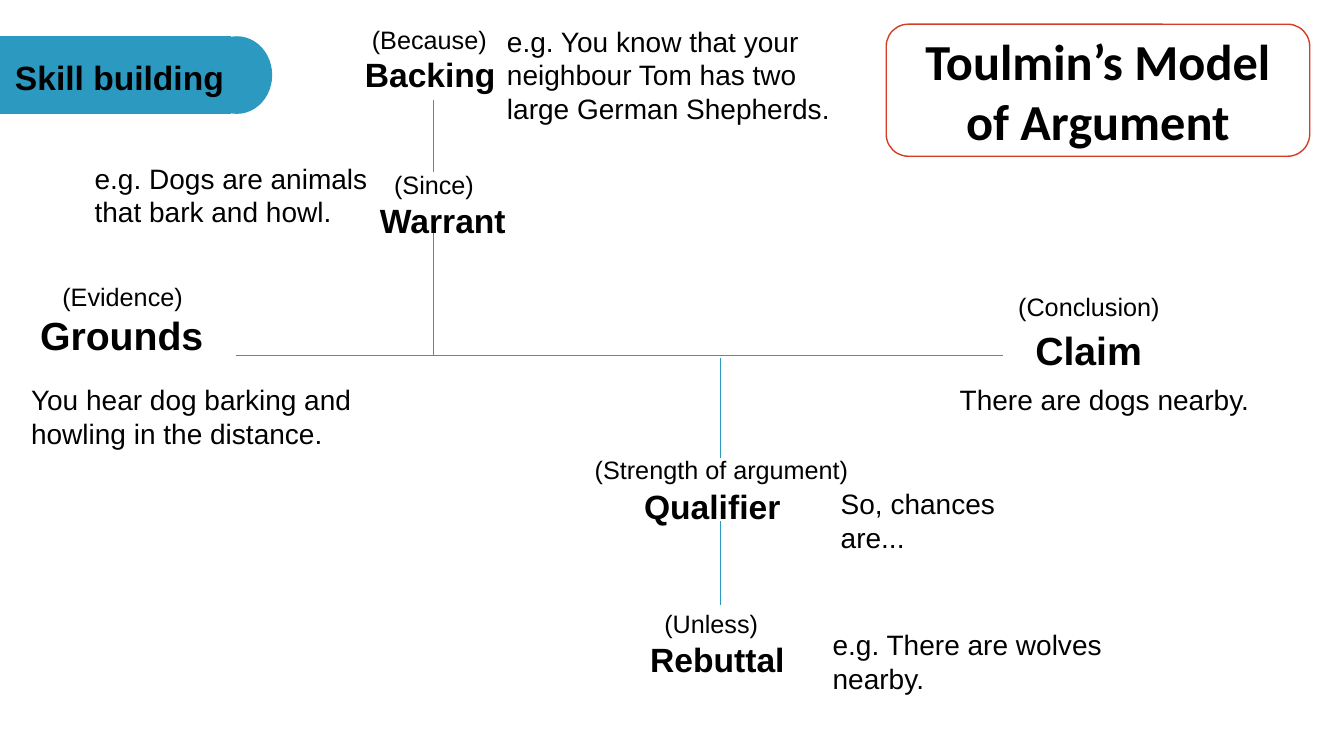
from pptx import Presentation
from pptx import util as u
from pptx.dml import color
from pptx.enum import shapes, text
from pptx.oxml import xmlchemy
from lxml import etree

BLACK, WHITE, BLUE, RED = "000000", "FFFFFF", "2C99C0", "D53E25"
DRAWING = "{http://schemas.openxmlformats.org/drawingml/2006/main}"


def rgb(value):
    return color.RGBColor.from_string(value)


class ArgumentPage:
    body_font = "Arial"
    title_font = "Calibri"
    label_size, example_size, part_size, end_size = 18, 20, 24, 28

    def __init__(self, deck):
        self.page = deck.slides.add_slide(deck.slide_layouts[6])

    def add_span(self, para, words, size, bold=False, font=None):
        span = para.add_run()
        span.text = words
        span.font.name = font or self.body_font
        span.font.size = u.Pt(size)
        span.font.bold = bold
        span.font.color.rgb = rgb(BLACK)

    def add_text(self, place, *lines, indent=0):
        box = self.page.shapes.add_textbox(*map(u.Inches, place))
        frame = box.text_frame
        frame.word_wrap = True
        frame.auto_size = text.MSO_AUTO_SIZE.SHAPE_TO_FIT_TEXT
        for index, (words, size, bold) in enumerate(lines):
            para = frame.add_paragraph() if index else frame.paragraphs[0]
            if indent and not index:
                properties = para._p.get_or_add_pPr()
                properties.set("marL", str(u.Inches(indent)))
                properties.set("indent", "0")
            self.add_span(para, words, size, bold)

    def add_label(self, place, words):
        self.add_text(place, (words, self.label_size, False))

    def add_example(self, place, words):
        self.add_text(place, (words, self.example_size, False))

    def add_heading(self, place, words, size):
        self.add_text(place, (words, size, True))

    def add_part(self, place, label, name, indent):
        self.add_text(place, (label, self.label_size, False),
                      (name, self.part_size, True), indent=indent)

    def add_block(self, kind, place, fill, outline=None):
        block = self.page.shapes.add_shape(kind, *map(u.Inches, place))
        block.shadow.inherit = False
        block.fill.solid()
        block.fill.fore_color.rgb = rgb(fill)
        if outline:
            block.line.color.rgb = rgb(outline)
            block.line.width = u.Pt(1)
        else:
            block.line.fill.background()
        return block

    def add_title(self, place, words):
        block = self.add_block(shapes.MSO_SHAPE.ROUNDED_RECTANGLE, place, WHITE, RED)
        frame = block.text_frame
        frame.word_wrap = True
        frame.vertical_anchor = text.MSO_ANCHOR.MIDDLE
        para = frame.paragraphs[0]
        para.alignment = text.PP_ALIGN.CENTER
        self.add_span(para, words, 36, True, self.title_font)

    def add_line(self, *ends):
        line = self.page.shapes.add_connector(
            shapes.MSO_CONNECTOR.STRAIGHT, *map(u.Inches, ends))
        line.line.color.rgb = rgb(BLUE)
        line.line.width = u.Pt(0.5)
        etree.SubElement(line._element.spPr, DRAWING + "effectLst")


def main():
    deck = Presentation()
    deck.slide_width, deck.slide_height = u.Inches(13.33), u.Inches(7.5)
    page = ArgumentPage(deck)

    page.add_block(shapes.MSO_SHAPE.RECTANGLE, (0, 0.36, 2.29, 0.77), BLUE)
    page.add_block(shapes.MSO_SHAPE.OVAL, (2, 0.36, 0.7, 0.77), BLUE)

    for place, words, size in (
        ((0.05, 0.52, 4.44, 0.5), "Skill building", page.part_size),
        ((0.3, 3.04, 1.92, 0.57), "Grounds", page.end_size),
        ((10.17, 3.19, 1.76, 0.57), "Claim", page.end_size),
        ((6.29, 4.77, 1.7, 0.5), "Qualifier", page.part_size),
    ):
        page.add_heading(place, words, size)

    for place, label, name, indent in (
        ((3.67, 1.63, 1.95, 0.81), "(Since)", "Warrant", 0.14),
        ((3.52, 0.19, 1.87, 0.81), "(Because)", "Backing", 0.07),
        ((6.35, 5.99, 2.21, 0.81), "(Unless)", "Rebuttal", 0.14),
    ):
        page.add_part(place, label, name, indent)

    for place, words in (
        ((0.21, 3.75, 3.46, 0.77), "You hear dog barking and howling in the distance."),
        ((9.42, 3.75, 3.18, 0.44), "There are dogs nearby."),
        ((0.84, 1.55, 3.11, 0.77), "e.g. Dogs are animals that bark and howl."),
        ((4.93, 0.19, 3.59, 1.11),
         "e.g. You know that your neighbour Tom has two large German Shepherds."),
        ((8.16, 6.18, 3.75, 0.77), "e.g. There are wolves nearby."),
        ((8.24, 4.78, 2.4, 0.77), "So, chances are..."),
    ):
        page.add_example(place, words)

    trunk, warrant, qualifier = 3.53, 4.3, 7.14
    page.add_line(2.34, trunk, 9.95, trunk)
    for x, top, bottom in (
        (warrant, 2.31, trunk),
        (warrant, 0.99, 1.71),
        (qualifier, 3.55, 4.54),
        (qualifier, 5.17, 6),
    ):
        page.add_line(x, top, x, bottom)

    page.add_title((8.79, 0.24, 4.2, 1.31), "Toulmin’s Model of Argument")

    for place, words in (
        ((0.52, 2.74, 1.69, 0.4), "(Evidence)"),
        ((10, 2.84, 1.78, 0.4), "(Conclusion)"),
        ((5.8, 4.46, 3.08, 0.4), "(Strength of argument)"),
    ):
        page.add_label(place, words)

    deck.save("out.pptx")


if __name__ == "__main__":
    main()
